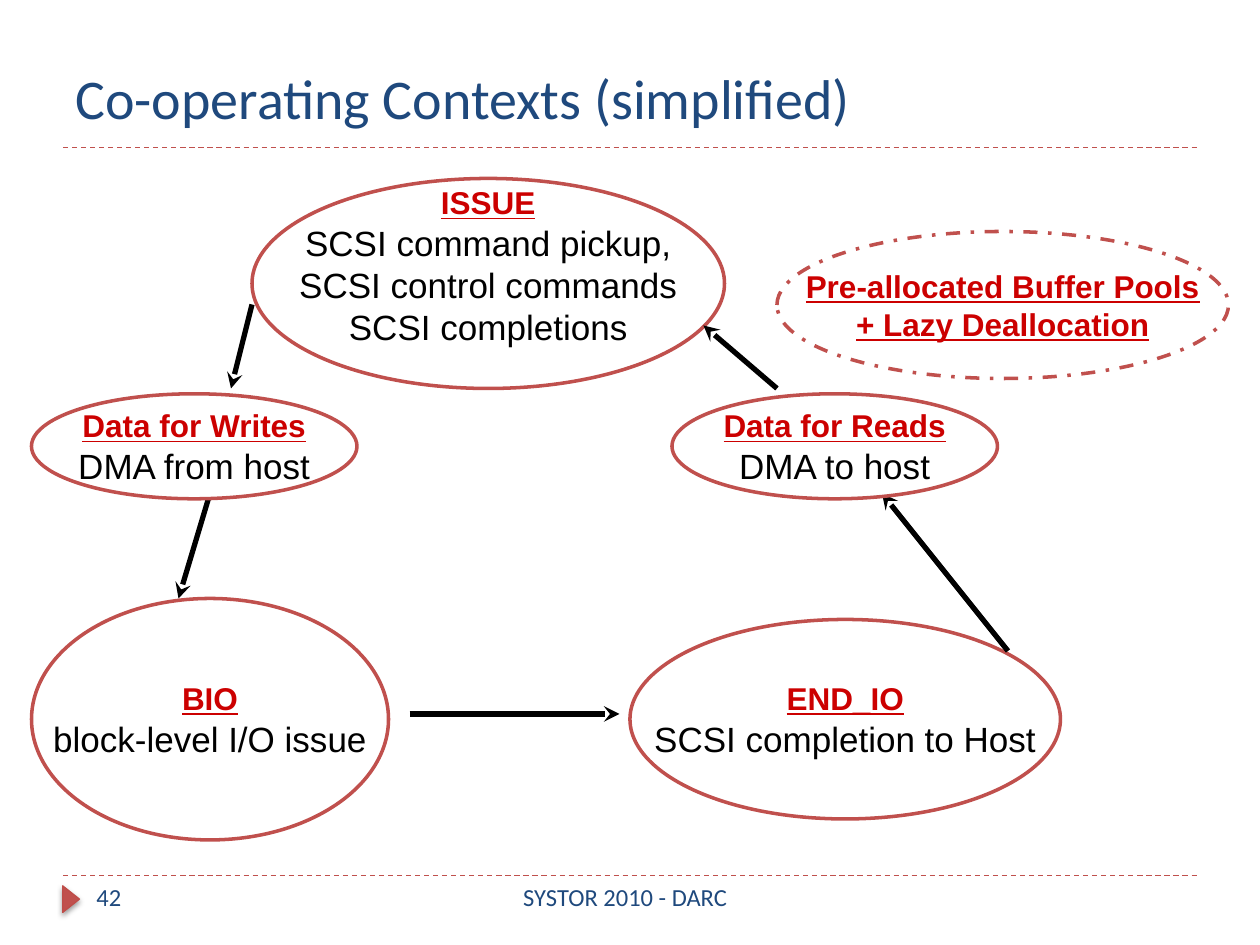
"""Build the slide on co-operating I/O contexts."""
from lxml import etree
from pptx import Presentation
from pptx import util as u
from pptx.dml import color
from pptx.enum import dml, shapes, text
from pptx.oxml import ns

COLORS = {"navy": "1F497D", "brick": "C0504D", "edge": "BF4C48", "red": "CC0000",
          "black": "000000", "white": "FFFFFF"}
RGB = {name: color.RGBColor.from_string(code) for name, code in COLORS.items()}
CENTER = text.PP_ALIGN.CENTER
LEFT = text.PP_ALIGN.LEFT


def add_line(start, end, shade, width):
    line = page.shapes.add_connector(
        shapes.MSO_CONNECTOR.STRAIGHT, *[u.Pt(value) for value in (*start, *end)])
    line.line.color.rgb = RGB[shade]
    line.line.width = u.Pt(width)
    etree.SubElement(line._element.spPr, ns.qn("a:effectLst"))
    return line


def add_span(para, words, font, size, shade, heading=False):
    span = para.add_run()
    span.text = words
    span.font.name = font
    span.font.size = u.Pt(size)
    span.font.color.rgb = RGB[shade]
    span.font.bold = span.font.underline = heading


deck = Presentation()
deck.slide_width, deck.slide_height = u.Pt(720), u.Pt(540)
page = deck.slides.add_slide(deck.slide_layouts[6])

for y in (500.4, 84.24):
    rule = add_line((36, y), (684, y), "brick", 0.75)
    rule.line.dash_style = dml.MSO_LINE.DASH

marker = page.shapes.add_shape(
    shapes.MSO_SHAPE.ISOSCELES_TRIANGLE, u.Pt(33), u.Pt(509), u.Pt(15.2), u.Pt(9.6))
marker.rotation = 90
marker.fill.solid()
marker.fill.fore_color.rgb = RGB["brick"]
marker.line.color.rgb = RGB["edge"]
marker.line.width = u.Pt(0.75)
effects = etree.SubElement(marker._element.spPr, ns.qn("a:effectLst"))
shadow = etree.SubElement(effects, ns.qn("a:outerShdw"), blurRad=str(u.Pt(3.1)),
                          dist=str(u.Pt(1.6)), dir="5400000", rotWithShape="0")
tint = etree.SubElement(shadow, ns.qn("a:srgbClr"), val=COLORS["black"])
etree.SubElement(tint, ns.qn("a:alpha"), val="38000")

labels = [
    ("Co-operating Contexts (simplified)", (36, 18, 648, 60), 32, LEFT, text.MSO_ANCHOR.BOTTOM),
    ("42", (48, 500.4, 156, 28.8), 14, LEFT, text.MSO_ANCHOR.TOP),
    ("SYSTOR 2010 - DARC", (210, 500.4, 294.5, 28.8), 14, CENTER, text.MSO_ANCHOR.TOP),
]
for words, place, size, align, anchor in labels:
    box = page.shapes.add_textbox(*[u.Pt(value) for value in place])
    box.text_frame.word_wrap = True
    box.text_frame.vertical_anchor = anchor
    para = box.text_frame.paragraphs[0]
    para.alignment = align
    add_span(para, words, "Calibri", size, "navy")

layers = [
    ([((144, 102, 270, 120), ["ISSUE"],
       ["SCSI command pickup,", "SCSI control commands", "SCSI completions"], 24.3),
      ((360, 354, 246, 114), ["END_IO"], ["SCSI completion to Host"], 3.6),
      ((444, 132.3, 258, 84), ["Pre-allocated Buffer Pools", "+ Lazy Deallocation"], [], 3.6)],
     [((120, 282), (102, 342)), ((576, 372), (504, 282)), ((234, 408), (354, 408))]),
    ([((18, 342, 204, 138), ["BIO"], ["block-level I/O issue"], 3.6),
      ((18, 225, 186, 60), ["Data for Writes"], ["DMA from host"], 3.6),
      ((384, 225, 186, 60), ["Data for Reads"], ["DMA to host"], 3.6)],
     [((144, 174), (132, 222)), ((444, 222), (402, 186))]),
]
for contexts, arrows in layers:
    for place, headings, details, bottom in contexts:
        oval = page.shapes.add_shape(shapes.MSO_SHAPE.OVAL, *[u.Pt(value) for value in place])
        oval.shadow.inherit = False
        oval.fill.solid()
        oval.fill.fore_color.rgb = RGB["white"]
        oval.line.color.rgb = RGB["brick"]
        oval.line.width = u.Pt(2)
        if not details:
            oval.line.dash_style = dml.MSO_LINE.DASH_DOT
        frame = oval.text_frame
        frame.word_wrap = False
        frame.vertical_anchor = text.MSO_ANCHOR.MIDDLE
        frame.margin_bottom = u.Pt(bottom)
        for index, words in enumerate(headings + details):
            para = frame.add_paragraph() if index else frame.paragraphs[0]
            para.alignment = CENTER
            if index < len(headings):
                add_span(para, words, "Arial", 18, "red", heading=True)
            else:
                add_span(para, words, "Arial", 20, "black")
    for start, end in arrows:
        arrow = add_line(start, end, "black", 3)
        etree.SubElement(arrow.line._get_or_add_ln(), ns.qn("a:tailEnd"), type="stealth")

deck.save("out.pptx")
